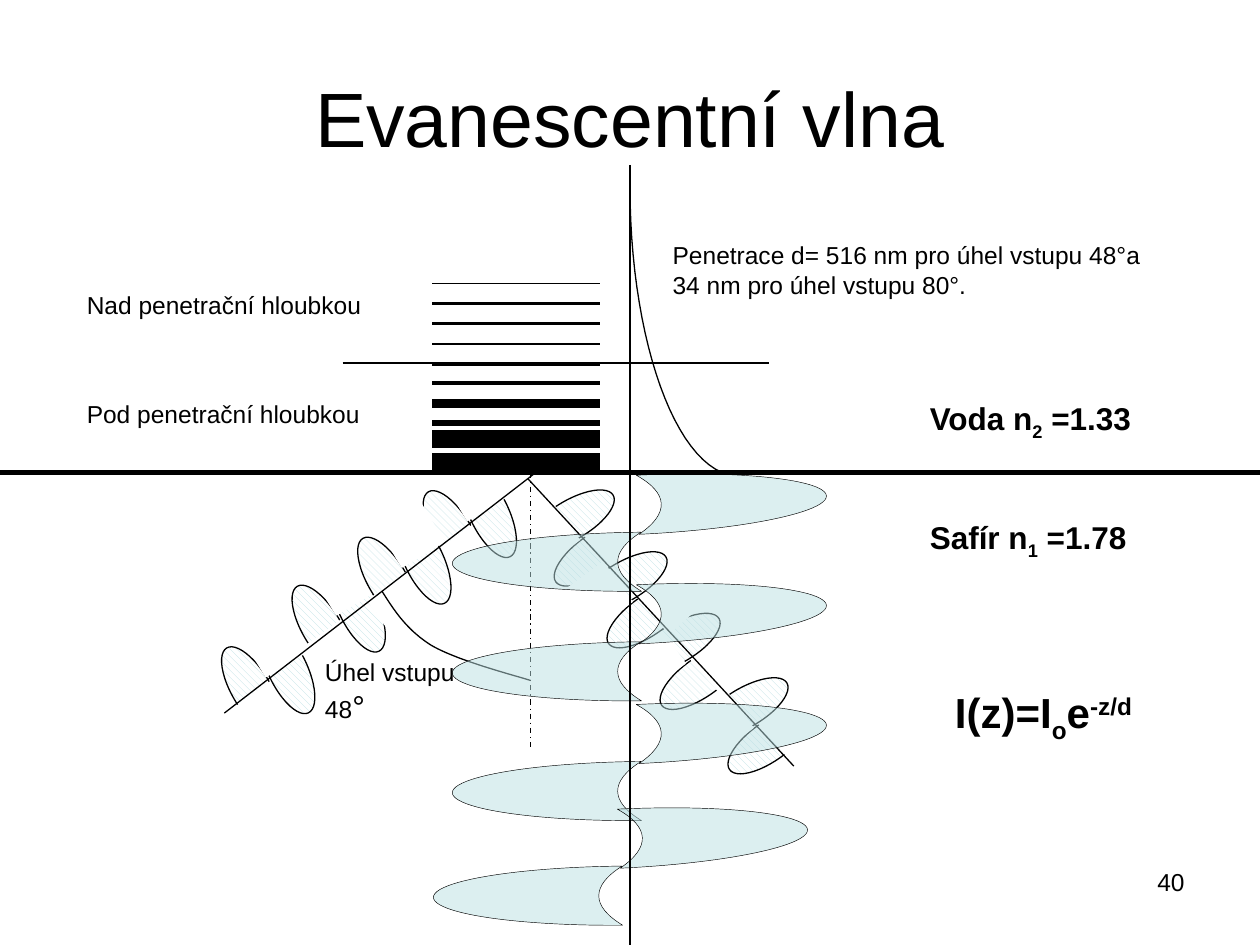
from dataclasses import dataclass
from typing import NamedTuple

from lxml import etree
from pptx import Presentation
from pptx.dml import color
from pptx.enum import dml, shapes, text
from pptx.oxml import ns
from pptx.util import Pt


@dataclass(frozen=True)
class Theme:
    font: str = "Arial"
    ink: color.RGBColor = color.RGBColor(0, 0, 0)
    paper: color.RGBColor = color.RGBColor(255, 255, 255)
    wave: color.RGBColor = color.RGBColor(0xBB, 0xE0, 0xE3)
    title: int = 44
    formula: int = 24
    medium: int = 18
    body: int = 14
    hair: float = 0.25
    thin: float = 0.75
    surface: float = 3


class Blade(NamedTuple):
    dx: float
    dy: float
    angle: float
    is_lobe: bool


class Beam(NamedTuple):
    origins: list
    blades: list
    start: tuple
    end: tuple


class Run(NamedTuple):
    words: str
    baseline: int = 0
    size: int = 0


T = Theme()
SURFACE_Y = 270
AXIS_X = 360

BEAMS = [
    Beam([(411.8, 412.6), (373, 375.8), (312.5, 305.3), (342.7, 340.6)],
         [Blade(0, 0, 324.6, True), Blade(25.9, -15.1, 319, False),
          Blade(-13.7, -19.4, 149.4, True), Blade(-22.3, -11.5, 143.8, False)],
         (301.7, 273.6), (453.6, 437.8)),
    Beam([(115.9, 383), (156.2, 347.8), (231.1, 293.8), (193.7, 320.4)],
         [Blade(0, 0, 59.6, True), Blade(20.2, 15.1, 54, False),
          Blade(20.7, -11.8, 244.4, True), Blade(20.7, -33.1, 238.8, False)],
         (305.3, 270.7), (128.2, 407.5)),
]
BARS = [(162, 0.75), (173.5, 1.25), (185, 1.75), (196.6, 1.5), (208.1, 1.75),
        (218.9, 2.5), (230.4, 5), (241.9, 3.5), (247.7, 3.5), (252.7, 7),
        (265, 12.25)]
MOONS = [(258.5, 304.6), (258.5, 367.2), (258.5, 435.6), (247.7, 495.4)]
ANGLE_ARC = [
    [(218.2, 337.7), (225.4, 349.2), (232.6, 360), (246.2, 368.6)],
    [(246.2, 368.6), (260.6, 377.3), (293.8, 385.9), (303.1, 388.8)],
]
DECAY = [[(412.6, 270), (382.3, 257), (360, 187.2), (360, 105.8)]]


def add_shape(s, kind, x: float, y: float, w: float, h: float, angle: float,
              line: color.RGBColor, width: float, pattern=None):
    sp = s.shapes.add_shape(kind, Pt(x), Pt(y), Pt(w), Pt(h))
    sp.rotation = angle
    sp.shadow.inherit = False
    sp.line.color.rgb = line
    sp.line.width = Pt(width)
    if pattern is None:
        sp.fill.solid()
        sp.fill.fore_color.rgb = T.paper
    else:
        sp.fill.patterned()
        sp.fill.pattern = pattern
        sp.fill.fore_color.rgb = T.wave
        sp.fill.back_color.rgb = T.paper
    return sp


def add_line(s, start: tuple, end: tuple, width: float = T.thin, dash=None):
    cx = s.shapes.add_connector(shapes.MSO_CONNECTOR.STRAIGHT,
                                *map(Pt, start + end))
    cx.line.color.rgb = T.ink
    cx.line.width = Pt(width)
    if dash is not None:
        cx.line.dash_style = dash
    etree.SubElement(cx._element.spPr, ns.qn("a:effectLst"))


def add_beam(s, beam: Beam):
    for x, y in beam.origins:
        for blade in beam.blades:
            at = (x + blade.dx, y + blade.dy)
            if blade.is_lobe:
                add_shape(s, shapes.MSO_SHAPE.OVAL, *at, 55.4, 22.3,
                          blade.angle, T.ink, T.thin,
                          dml.MSO_PATTERN.WIDE_DOWNWARD_DIAGONAL)
            else:
                add_shape(s, shapes.MSO_SHAPE.RECTANGLE, *at, 36, 28.1,
                          blade.angle, T.paper, T.thin)
    add_line(s, beam.start, beam.end)


def add_moon(s, x: float, y: float, angle: float):
    sp = add_shape(s, shapes.MSO_SHAPE.MOON, x, y, 108, 33.8, angle, T.ink,
                   T.hair, dml.MSO_PATTERN.DARK_HORIZONTAL)
    sp.adjustments[0] = 0.875
    fill = sp._element.spPr.find(ns.qn("a:pattFill"))
    for clr in fill.iter(ns.qn("a:srgbClr")):
        etree.SubElement(clr, ns.qn("a:alpha")).set("val", "50000")


def add_curve(s, pieces: list, steps: int = 24):
    points = []
    for a, b, c, d in pieces:
        for i in range(steps + 1):
            t = i / steps
            points.append(tuple(
                Pt((1 - t) ** 3 * a[k] + 3 * (1 - t) ** 2 * t * b[k]
                   + 3 * (1 - t) * t ** 2 * c[k] + t ** 3 * d[k])
                for k in (0, 1)))
    fb = s.shapes.build_freeform(*points[0])
    fb.add_line_segments(points[1:], close=False)
    sp = fb.convert_to_shape()
    sp.shadow.inherit = False
    sp.fill.background()
    sp.line.color.rgb = T.ink
    sp.line.width = Pt(T.thin)


def add_text(s, paragraphs: list, x: float, y: float, w: float, h: float, *,
             size: int = T.body, bold: bool = False,
             align=text.PP_ALIGN.LEFT, anchor=text.MSO_ANCHOR.TOP):
    tf = s.shapes.add_textbox(Pt(x), Pt(y), Pt(w), Pt(h)).text_frame
    tf.word_wrap = True
    tf.vertical_anchor = anchor
    for i, runs in enumerate(paragraphs):
        p = tf.add_paragraph() if i else tf.paragraphs[0]
        p.alignment = align
        for run in runs:
            r = p.add_run()
            r.text = run.words
            r.font.name = T.font
            r.font.size = Pt(run.size or size)
            r.font.bold = bold
            r.font.color.rgb = T.ink
            if run.baseline:
                r._r.get_or_add_rPr().set("baseline", str(run.baseline * 1000))


def main():
    prs = Presentation()
    prs.slide_width, prs.slide_height = Pt(720), Pt(540)
    s = prs.slides.add_slide(prs.slide_layouts[6])

    add_text(s, [[Run("40")]], 516.2, 491.8, 167.8, 37.4,
             align=text.PP_ALIGN.RIGHT)
    for beam in BEAMS:
        add_beam(s, beam)
    add_line(s, (303.1, SURFACE_Y), (303.1, 428.4),
             dash=dml.MSO_LINE.DASH_DOT)
    for y, width in BARS:
        add_line(s, (247, y), (342.7, y), width)
    add_curve(s, ANGLE_ARC)
    add_text(s, [[Run("Úhel vstupu")], [Run("48"), Run("°", size=T.medium)]],
             178.6, 372.2, 96.5, 45.4)
    add_line(s, (AXIS_X, 94.3), (AXIS_X, SURFACE_Y))
    add_curve(s, DECAY)
    add_line(s, (195.8, 207.4), (439.2, 207.4))
    for x, y in MOONS:
        add_moon(s, x, y, 359.5)
        add_moon(s, x + 105.8, y - 35.6, 177.3)

    for name, index, value, y in (("Safír n", "1", " =1.78", 292.3),
                                  ("Voda n", "2", " =1.33", 224.6)):
        add_text(s, [[Run(name), Run(index, -25), Run(value)]],
                 524.2, y, 170, 28.8, size=T.medium, bold=True)
    for words, y in (("Pod", 224.6), ("Nad", 162)):
        add_text(s, [[Run(f"{words} penetrační hloubkou")]],
                 42.5, y, 193, 23.8)
    add_line(s, (0, SURFACE_Y), (720, SURFACE_Y), T.surface)
    add_text(s, [[Run("Penetrace d= 516 nm pro úhel vstupu 48°a "
                      "34 nm pro úhel vstupu 80°.")]],
             377.3, 133.9, 295.2, 41)
    add_text(s, [[Run("I(z)=I"), Run("o", -25), Run("e"), Run("-z/d", 30)]],
             538.6, 388.8, 181.4, 36, size=T.formula, bold=True)
    add_line(s, (AXIS_X, SURFACE_Y), (AXIS_X, 540))
    add_text(s, [[Run("Evanescentní vlna")]], 36, 21.6, 648, 90,
             size=T.title, align=text.PP_ALIGN.CENTER,
             anchor=text.MSO_ANCHOR.MIDDLE)
    prs.save("out.pptx")


if __name__ == "__main__":
    main()
